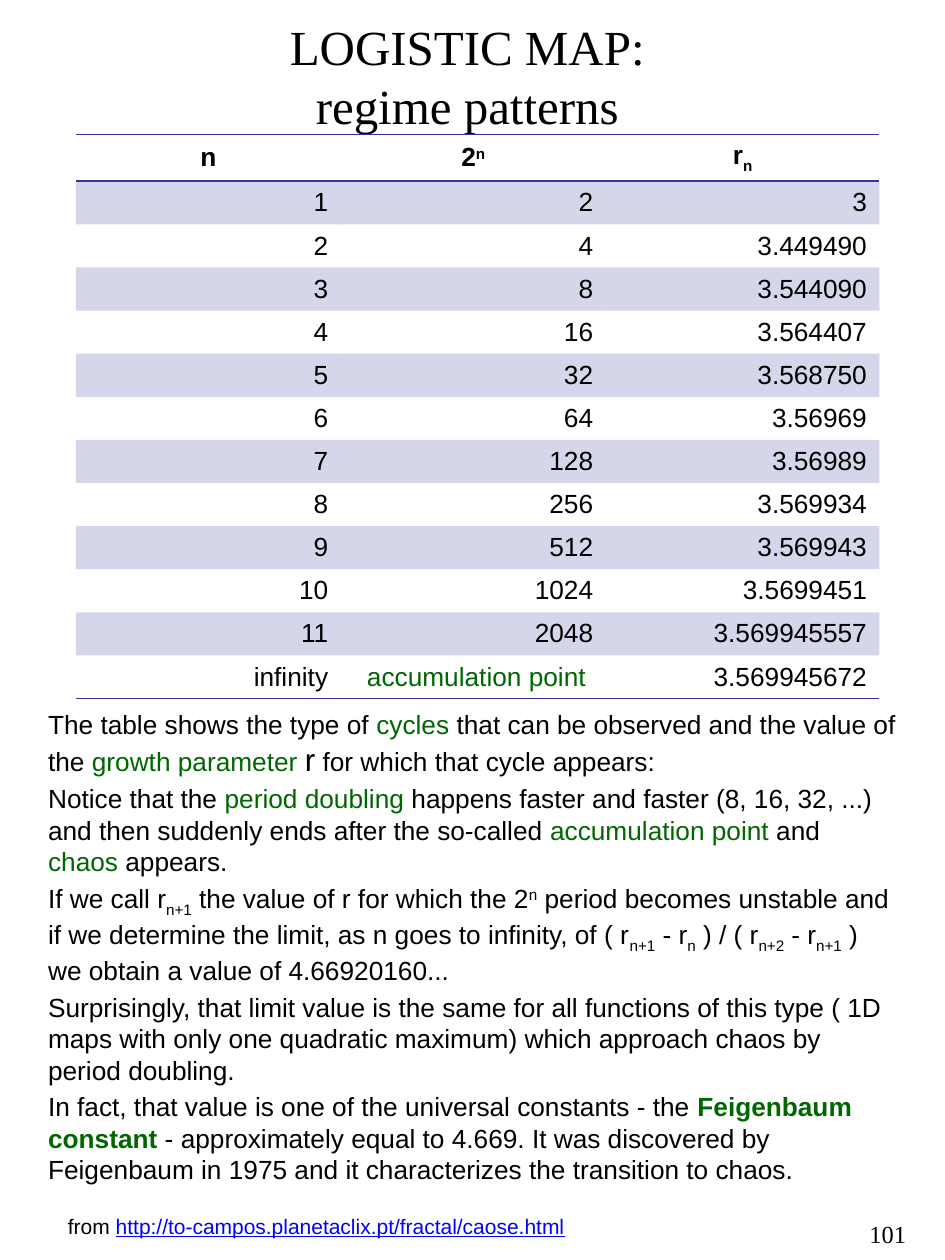
from dataclasses import dataclass
from typing import NamedTuple, Optional

from lxml.etree import SubElement
from pptx import Presentation
from pptx.dml.color import RGBColor as RGB
from pptx.enum.text import MSO_ANCHOR as Anchor, PP_ALIGN as Align
from pptx.oxml import parse_xml
from pptx.oxml.ns import nsdecls, qn
from pptx.util import Cm, Pt


@dataclass(frozen=True)
class Theme:
    sans: str = "Arial"
    serif: str = "Times New Roman"
    ink: str = "000000"
    term: str = "006600"
    link: str = "0000FF"
    rule: str = "333399"
    band_alpha: int = 20
    title: int = 28
    body: int = 15
    symbol: int = 18
    source: int = 12
    number: int = 14


class Span(NamedTuple):
    text: str
    color: Optional[str] = None
    size: Optional[int] = None
    bold: Optional[bool] = None
    underline: Optional[bool] = None
    baseline: int = 0


class Box(NamedTuple):
    left: float
    top: float
    width: float
    height: float


class Style(NamedTuple):
    font: str
    size: int
    align: Align = Align.LEFT
    bold: bool = False


T = Theme()
NO_STYLE = "{2D5ABB26-0587-4C30-8999-92F81FD0307C}"


def term(text: str, bold: Optional[bool] = None) -> Span:
    return Span(text, color=T.term, bold=bold)


def sub(text: str) -> Span:
    return Span(text, baseline=-25)


def sup(text: str) -> Span:
    return Span(text, baseline=30)


def add_span(p, span: Span) -> None:
    for i, line in enumerate(span.text.split("\n")):
        if i:
            p.add_line_break()
        r = p.add_run()
        r.text = line
        r.font.bold = span.bold
        r.font.underline = span.underline
        if span.size:
            r.font.size = Pt(span.size)
        if span.color:
            r.font.color.rgb = RGB.from_string(span.color)
        if span.baseline:
            r.font._element.set("baseline", str(span.baseline * 1000))


def write(p, spans: list[Span], style: Style) -> None:
    p.alignment = style.align
    p.font.name = style.font
    p.font.size = Pt(style.size)
    p.font.bold = style.bold
    p.font.color.rgb = RGB.from_string(T.ink)
    for span in spans:
        add_span(p, span)


def add_text(slide, box: Box, paragraphs: list[list[Span]], style: Style,
             anchor: Anchor = Anchor.TOP) -> None:
    tf = slide.shapes.add_textbox(*map(Cm, box)).text_frame
    tf.word_wrap = True
    tf.vertical_anchor = anchor
    for i, spans in enumerate(paragraphs):
        p = tf.add_paragraph() if i else tf.paragraphs[0]
        if i:
            p.space_before = Pt(3)
        write(p, spans, style)


def add_borders(cell, tags: list[str]) -> None:
    for position, tag in enumerate(tags):
        cell._tc.get_or_add_tcPr().insert(position, parse_xml(
            f'<a:{tag} {nsdecls("a")} w="12700"><a:solidFill>'
            f'<a:srgbClr val="{T.rule}"/></a:solidFill></a:{tag}>'))


def fill_cell(cell, banded: bool) -> None:
    if not banded:
        cell.fill.background()
        return
    cell.fill.solid()
    cell.fill.fore_color.rgb = RGB.from_string(T.rule)
    color = cell._tc.tcPr.find(f".//{qn('a:srgbClr')}")
    SubElement(color, qn("a:alpha"), val=str(T.band_alpha * 1000))


def add_regimes(slide, box: Box, widths: list[float],
                rows: list[list[list[Span]]]) -> None:
    table = slide.shapes.add_table(len(rows), len(widths), *map(Cm, box)).table
    table.first_row = table.horz_banding = False
    table._tbl.tblPr.find(qn("a:tableStyleId")).text = NO_STYLE
    for column, width in zip(table.columns, widths):
        column.width = Cm(width)
    header = Style(T.sans, T.body, Align.CENTER, bold=True)
    value = Style(T.sans, T.body, Align.RIGHT)
    borders = {0: ["lnT", "lnB"], len(rows) - 1: ["lnB"]}
    for i, row in enumerate(rows):
        table.rows[i].height = Cm(box.height / len(rows))
        for j, spans in enumerate(row):
            cell = table.cell(i, j)
            cell.vertical_anchor = Anchor.MIDDLE
            cell.margin_top = cell.margin_bottom = Cm(0.11)
            write(cell.text_frame.paragraphs[0], spans, value if i else header)
            fill_cell(cell, i % 2 == 1)
            add_borders(cell, borders.get(i, []))


R_VALUES = ["3", "3.449490", "3.544090", "3.564407", "3.568750", "3.56969",
            "3.56989", "3.569934", "3.569943", "3.5699451", "3.569945557"]
REGIMES = [
    [[Span("n")], [Span("2"), sup("n")], [Span("r"), sub("n")]],
    *([[Span(str(n))], [Span(str(2 ** n))], [Span(r)]]
      for n, r in enumerate(R_VALUES, 1)),
    [[Span("infinity")], [term("accumulation point ")], [Span("3.569945672")]],
]

NOTES = [
    [Span("The table shows the type of "), term("cycles"),
     Span(" that can be observed and the value of the "),
     term("growth parameter "), Span("r", size=T.symbol),
     Span(" for which that cycle appears:")],
    [Span("Notice that the "), term("period doubling "),
     Span("happens faster and faster (8, 16, 32, ...) and then suddenly "
          "ends after the so-called "),
     term("accumulation point "), Span("and "), term("chaos"),
     Span(" appears.")],
    [Span("If we call r"), sub("n+1"),
     Span(" the value of r for which the 2"), sup("n"),
     Span(" period becomes unstable and if we determine the limit, "
          "as n goes to infinity, of ( r"),
     sub("n+1"), Span(" - r"), sub("n"), Span(" ) / ( r"), sub("n+2"),
     Span(" - r"), sub("n+1"),
     Span(" ) we obtain a value of 4.66920160...")],
    [Span("Surprisingly, that limit value is the same for all functions of "
          "this type ( 1D maps with only one quadratic maximum) which "
          "approach chaos by period doubling.")],
    [Span("In fact, that value is one of the universal constants - the "),
     term("Feigenbaum constant ", bold=True),
     Span("- approximately equal to 4.669. It was discovered by Feigenbaum "
          "in 1975 and it characterizes the transition to chaos.")],
]


def main() -> None:
    prs = Presentation()
    prs.slide_width, prs.slide_height = Cm(19.05), Cm(25.4)
    slide = prs.slides.add_slide(prs.slide_layouts[6])

    add_text(slide, Box(14.07, 24.1, 4.45, 1.2), [[Span("101")]],
             Style(T.serif, T.number, Align.RIGHT), Anchor.BOTTOM)
    add_text(slide, Box(1.32, 0.13, 16.2, 2.77),
             [[Span("LOGISTIC MAP:\nregime patterns")]],
             Style(T.serif, T.title, Align.CENTER), Anchor.MIDDLE)
    add_text(slide, Box(0.72, 14.15, 17.62, 9.78), NOTES,
             Style(T.sans, T.body))
    add_regimes(slide, Box(1.53, 2.71, 16.2, 11.3), [5.34, 5.34, 5.52], REGIMES)
    add_text(slide, Box(1.12, 24.33, 12.8, 0.76),
             [[Span("from "),
               Span("http://to-campos.planetaclix.pt/fractal/caose.html",
                    color=T.link, underline=True)]],
             Style(T.sans, T.source))
    prs.save("out.pptx")


if __name__ == "__main__":
    main()
